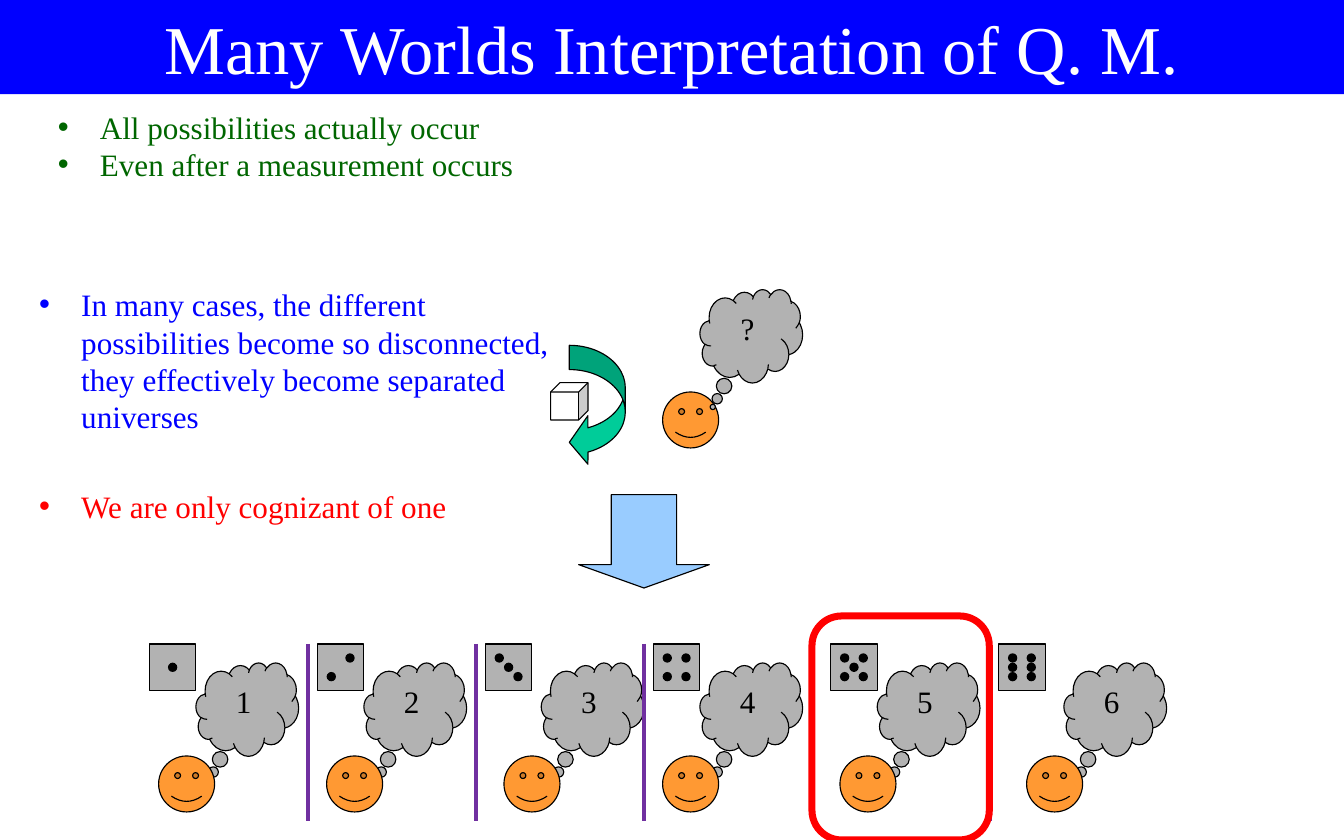
from lxml import etree
from pptx import Presentation
from pptx.dml.color import RGBColor
from pptx.enum.shapes import MSO_CONNECTOR, MSO_SHAPE
from pptx.enum.text import MSO_ANCHOR, MSO_AUTO_SIZE, PP_ALIGN
from pptx.oxml.ns import qn
from pptx.util import Cm, Pt

RECTANGLE, ELLIPSE = MSO_SHAPE.RECTANGLE, MSO_SHAPE.OVAL
SMILEY, CLOUD = MSO_SHAPE.SMILEY_FACE, MSO_SHAPE.CLOUD_CALLOUT
CUBE, DOWN_ARROW = MSO_SHAPE.CUBE, MSO_SHAPE.DOWN_ARROW
CURVED_ARROW = MSO_SHAPE.CURVED_LEFT_ARROW
ROUNDED = MSO_SHAPE.ROUNDED_RECTANGLE
STRAIGHT = MSO_CONNECTOR.STRAIGHT
TOP, MIDDLE = MSO_ANCHOR.TOP, MSO_ANCHOR.MIDDLE
LEFT, CENTER = PP_ALIGN.LEFT, PP_ALIGN.CENTER
NO_AUTOFIT = MSO_AUTO_SIZE.NONE
COMPARISON_LAYOUT = 4

FONT = "Times New Roman"
COLORS = {
    "black": "000000", "white": "FFFFFF", "blue": "0000FF", "green": "006600",
    "red": "FF0000", "teal": "00CC99", "orange": "FF9933", "gray": "B2B2B2",
    "sky": "99CCFF", "purple": "7030A0",
}

# Lists: text lines, colour, box in grid steps
LISTS = [
    (["All possibilities actually occur", "Even after a measurement occurs"],
     "green", (5, 11, 109, 9.25)),
    (["In many cases, the different possibilities become so disconnected, "
      "they effectively become separated universes"],
     "blue", (3, 30, 58, 17.4)),
    (["We are only cognizant of one"], "red", (3, 51.6, 48, 5.3)),
]

# One world per die result: left edge of the die and of the observer
WORLDS = [(16, 17), (34, 35), (52, 54), (70, 71), (89, 90), (107, 110)]
DIVIDERS = [33, 51, 69, 87, 106]

# Pips as (column, row) on the 3 by 3 field of a die
DIAGONAL = [(0, 0), (2, 2)]
CORNERS = DIAGONAL + [(2, 0), (0, 2)]
PIPS = {
    1: [(1, 1)],
    2: [(2, 0), (0, 2)],
    3: DIAGONAL + [(1, 1)],
    4: CORNERS,
    5: CORNERS + [(1, 1)],
    6: CORNERS + [(0, 1), (2, 1)],
}


def grid(steps):
    """Length of a number of grid steps, twelve to the inch."""
    return Cm(steps * 2.54 / 12)


def color(name):
    return RGBColor.from_string(COLORS[name])


def set_attributes(target, values):
    for name, value in values.items():
        setattr(target, name, value)


def place(shape, box):
    set_attributes(shape, dict(zip(("left", "top", "width", "height"), map(grid, box))))


def write(shape, lines, size, color_name, alignment, anchor=TOP):
    frame = shape.text_frame
    frame.text = "\n".join(lines)
    set_attributes(frame, {"word_wrap": True, "auto_size": NO_AUTOFIT, "vertical_anchor": anchor})
    for paragraph in frame.paragraphs:
        set_attributes(paragraph, {"alignment": alignment, "line_spacing": 1.0,
                                   "space_before": Pt(0), "space_after": Pt(0)})
        for run in paragraph.runs:
            set_attributes(run.font, {"name": FONT, "size": Pt(size), "bold": False})
            run.font.color.rgb = color(color_name)


def fill_title(title, text):
    place(title, (0, 0, 144, 10.1))
    title.fill.solid()
    title.fill.fore_color.rgb = color("blue")
    write(title, [text], 44, "white", CENTER, MIDDLE)


def fill_list(placeholder, lines, color_name, box):
    place(placeholder, box)
    write(placeholder, lines, 20, color_name, LEFT)
    for paragraph in placeholder.text_frame.paragraphs:
        properties = paragraph._p.get_or_add_pPr()
        properties.set("marL", str(grid(4.5)))
        properties.set("indent", str(-grid(4.5)))
        etree.SubElement(properties, qn("a:buChar")).set("char", "•")


def add_figure(shapes, kind, box, fill=None, line="black", width=0.75, adjustments=()):
    shape = shapes.add_shape(kind, *map(grid, box))
    shape.shadow.inherit = False
    if fill:
        shape.fill.solid()
        shape.fill.fore_color.rgb = color(fill)
    else:
        shape.fill.background()
    if line:
        shape.line.color.rgb = color(line)
        shape.line.width = Pt(width)
    else:
        shape.line.fill.background()
    for index, value in enumerate(adjustments):
        shape.adjustments[index] = value
    return shape


def add_face(shapes, left, top):
    add_figure(shapes, SMILEY, (left, top, 6, 6), "orange")


def add_thought(shapes, left, top, text):
    cloud = add_figure(shapes, CLOUD, (left, top, 11, 10), "gray", adjustments=(-0.375, 0.76))
    write(cloud, [text], 20, "black", CENTER)


def add_die(shapes, left, top, value):
    die = shapes.add_group_shape().shapes
    add_figure(die, RECTANGLE, (left, top, 5, 5), "gray")
    for column, row in PIPS[value]:
        add_figure(die, ELLIPSE, (left + 1 + column, top + 1 + row, 1, 1), "black", None)


def add_dividers(shapes):
    dividers = shapes.add_group_shape().shapes
    for left in DIVIDERS:
        line = dividers.add_connector(STRAIGHT, grid(left), grid(69), grid(left), grid(88))
        line.line.color.rgb = color("purple")
        line.line.width = Pt(3)
        etree.SubElement(line._element.spPr, qn("a:effectLst"))


def main():
    presentation = Presentation()
    presentation.slide_width, presentation.slide_height = grid(144), grid(90)
    slide = presentation.slides.add_slide(presentation.slide_layouts[COMPARISON_LAYOUT])
    shapes = slide.shapes

    # Title and lists
    fill_title(shapes.title, "Many Worlds Interpretation of Q. M.")
    bodies = list(slide.placeholders)[1:]
    for body, content in zip(bodies, LISTS):
        fill_list(body, *content)
    for unused in bodies[len(LISTS):]:
        unused._element.getparent().remove(unused._element)

    # Rolling die and its observer
    add_figure(shapes, CURVED_ARROW, (61, 37, 6, 13), "teal", adjustments=(0.433, 0.867, 0.333))
    add_figure(shapes, CUBE, (59, 41, 4, 4), "white")
    add_face(shapes, 71, 42)
    add_thought(shapes, 75, 31, "?")
    add_figure(shapes, DOWN_ARROW, (62, 53, 14, 10), "sky", adjustments=(0.5, 0.25))

    # Separate worlds, one for each result
    for value, (die_left, face_left) in enumerate(WORLDS, start=1):
        add_die(shapes, die_left, 69, value)
        add_thought(shapes, face_left + 4, 71, str(value))
        add_face(shapes, face_left, 81)
    add_dividers(shapes)

    # The world we are aware of
    add_figure(shapes, ROUNDED, (87, 66, 19, 24), line="red", width=4.5)

    presentation.save("out.pptx")


if __name__ == "__main__":
    main()
